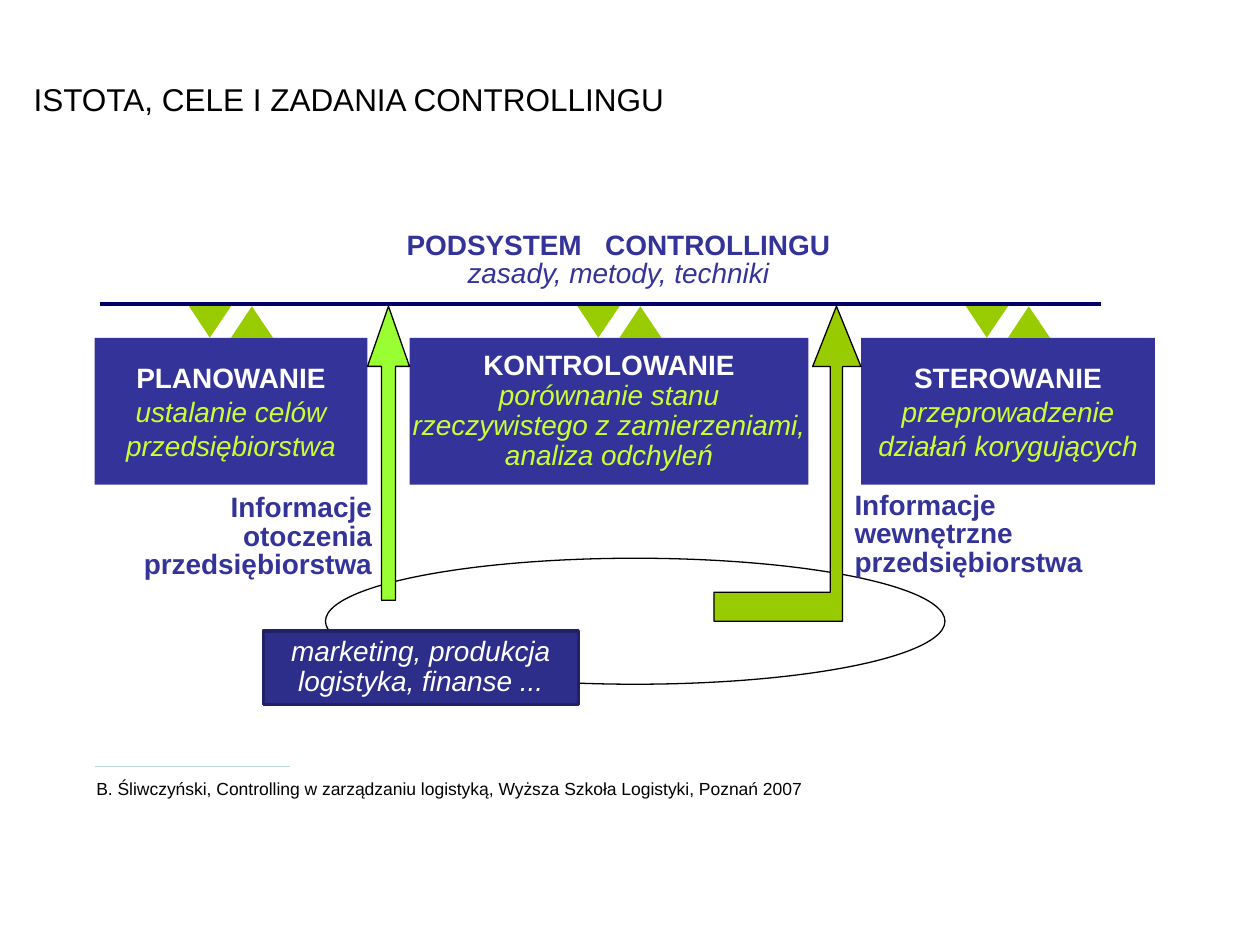
"""Build the slide on the nature, goals and tasks of controlling."""
from lxml import etree
from pptx import Presentation
from pptx.dml.color import RGBColor
from pptx.enum.shapes import MSO_CONNECTOR, MSO_SHAPE
from pptx.enum.text import MSO_ANCHOR, PP_ALIGN
from pptx.oxml.ns import qn
from pptx.util import Pt

RECT, OVAL = MSO_SHAPE.RECTANGLE, MSO_SHAPE.OVAL
TRIANGLE, UP_ARROW = MSO_SHAPE.ISOSCELES_TRIANGLE, MSO_SHAPE.UP_ARROW
STRAIGHT = MSO_CONNECTOR.STRAIGHT
MIDDLE = MSO_ANCHOR.MIDDLE
LEFT, CENTER, RIGHT, JUSTIFY = PP_ALIGN.LEFT, PP_ALIGN.CENTER, PP_ALIGN.RIGHT, PP_ALIGN.JUSTIFY
INDIGO, LIME, GREEN, BLACK, WHITE = "333399", "CCFF33", "99CC00", "000000", "FFFFFF"
TIGHT = (0, 0.72, 0, 0.72)


def color(value):
    return RGBColor.from_string(value)


def write(paragraph, text, size=16, ink=BLACK, bold=False, italic=False,
          align=CENTER, leading=1.0, gap=0):
    paragraph.alignment = align
    paragraph.line_spacing = leading
    pieces = text.partition(" ") if gap else [text]
    for piece in pieces:
        run = paragraph.add_run()
        run.text = piece
        font = run.font
        font.name, font.size = "Arial", Pt(size)
        font.bold, font.italic = bold, italic
        font.color.rgb = color(ink)
        if piece == " ":
            run._r.get_or_add_rPr().set("spc", str(round(gap * 100)))


class Canvas:
    def __init__(self, slide, line_width=0.75):
        self.slide = slide
        self.shapes = slide.shapes
        self.line_width = line_width

    def paint(self, shape, fill=None, line=None, width=None):
        shape.shadow.inherit = False
        if fill:
            shape.fill.solid()
            shape.fill.fore_color.rgb = color(fill)
        else:
            shape.fill.background()
        if line:
            shape.line.color.rgb = color(line)
            shape.line.width = Pt(width or self.line_width)
        else:
            shape.line.fill.background()

    def fill_text(self, frame, lines, insets=TIGHT, wrap=True, **style):
        frame.word_wrap = wrap
        frame.vertical_anchor = MIDDLE
        (frame.margin_left, frame.margin_top,
         frame.margin_right, frame.margin_bottom) = map(Pt, insets)
        for index, (text, extra) in enumerate(lines):
            paragraph = frame.add_paragraph() if index else frame.paragraphs[0]
            write(paragraph, text, **{**style, **extra})

    def title(self, text, box):
        title = self.shapes.title
        title.left, title.top, title.width, title.height = map(Pt, box)
        self.fill_text(title.text_frame, [(text, {})], (7.2, 3.6, 7.2, 3.6), size=18, align=LEFT)

    def text(self, box, lines, **style):
        label = self.shapes.add_textbox(*map(Pt, box))
        self.fill_text(label.text_frame, lines, **style)

    def shape(self, kind, box, adjust=(), flipped=False, **look):
        shape = self.shapes.add_shape(kind, *map(Pt, box))
        for index, value in enumerate(adjust):
            shape.adjustments[index] = value
        if flipped:
            shape._element.spPr.get_or_add_xfrm().set("flipV", "1")
        self.paint(shape, **look)
        return shape

    def box(self, box, lines, fill=INDIGO, line=None, width=None, **style):
        shape = self.shape(RECT, box, fill=fill, line=line, width=width)
        self.fill_text(shape.text_frame, lines, **style)

    def outline(self, points, **look):
        builder = self.shapes.build_freeform(*map(Pt, points[0]), scale=1.0)
        builder.add_line_segments([(Pt(x), Pt(y)) for x, y in points[1:]], close=True)
        self.paint(builder.convert_to_shape(), **look)

    def rule(self, left, right, y, ink, width=None):
        rule = self.shapes.add_connector(STRAIGHT, Pt(left), Pt(y), Pt(right), Pt(y))
        rule.line.color.rgb = color(ink)
        rule.line.width = Pt(width or self.line_width)
        etree.SubElement(rule._element.spPr, qn("a:effectLst"))


def main():
    deck = Presentation()
    deck.slide_width, deck.slide_height = Pt(720), Pt(540)
    canvas = Canvas(deck.slides.add_slide(deck.slide_layouts[5]))

    canvas.title("ISTOTA, CELE I ZADANIA CONTROLLINGU", (12, 42, 564, 29))
    canvas.shape(OVAL, (186, 319, 354, 72), line=BLACK)
    canvas.text((187, 128, 337, 42),
                [("PODSYSTEM CONTROLLINGU", {"bold": True, "gap": 8.9}),
                 ("zasady, metody, techniki", {"italic": True})],
                insets=(0, 0.72, 4.32, 0.72), wrap=False, ink=INDIGO, leading=0.85)

    functions = [
        (54, 156, 1, "PLANOWANIE", "ustalanie celów przedsiębiorstwa"),
        (492, 168, 1, "STEROWANIE", "przeprowadzenie działań korygujących"),
        (234, 228, 0.9, "KONTROLOWANIE",
         "porównanie stanu rzeczywistego z zamierzeniami, analiza odchyleń"),
    ]
    for left, width, leading, name, task in functions:
        canvas.box((left, 193, width, 84),
                   [(name, {"ink": WHITE, "bold": True}),
                    (task, {"ink": LIME, "italic": True})], leading=leading)

    for pair in range(3):
        for side in range(2):
            canvas.shape(TRIANGLE, (108 + 222 * pair + 24 * side, 175, 24, 18),
                         adjust=[0.495], flipped=side == 0, fill=GREEN)

    canvas.outline([(478, 175), (464.4, 209.5), (474.5, 209.5), (474.5, 338.4),
                    (408, 338.4), (408, 355), (481.5, 355), (481.5, 209.5), (492, 209.5)],
                   fill=GREEN, line=BLACK)
    canvas.shape(UP_ARROW, (210, 175, 24, 168), adjust=[0.333, 1.432],
                 fill="99FF33", line=BLACK)

    sources = [((56, 278.6, 156.5, 57.6), RIGHT, "Informacje otoczenia przedsiębiorstwa"),
               ((488.3, 275.8, 170, 60), LEFT, "Informacje wewnętrzne przedsiębiorstwa")]
    for place, align, text in sources:
        canvas.text(place, [(text, {})], ink=INDIGO, bold=True, align=align, leading=0.85)

    canvas.box((150.5, 360.5, 180, 42),
               [("marketing, produkcja", {}), ("logistyka, finanse ...", {})],
               fill="2D2D8A", line="212166", width=2, ink=WHITE, italic=True, leading=0.9)
    canvas.rule(57, 629, 173.5, "000066", 2.25)
    canvas.text((48, 441, 629, 19.4),
                [("B. Śliwczyński, Controlling w zarządzaniu logistyką, "
                  "Wyższa Szkoła Logistyki, Poznań 2007", {})],
                insets=(7.2, 3.6, 7.2, 3.6), size=10, align=JUSTIFY)
    canvas.rule(54, 166, 438, "B6DCDF")
    deck.save("out.pptx")


if __name__ == "__main__":
    main()
